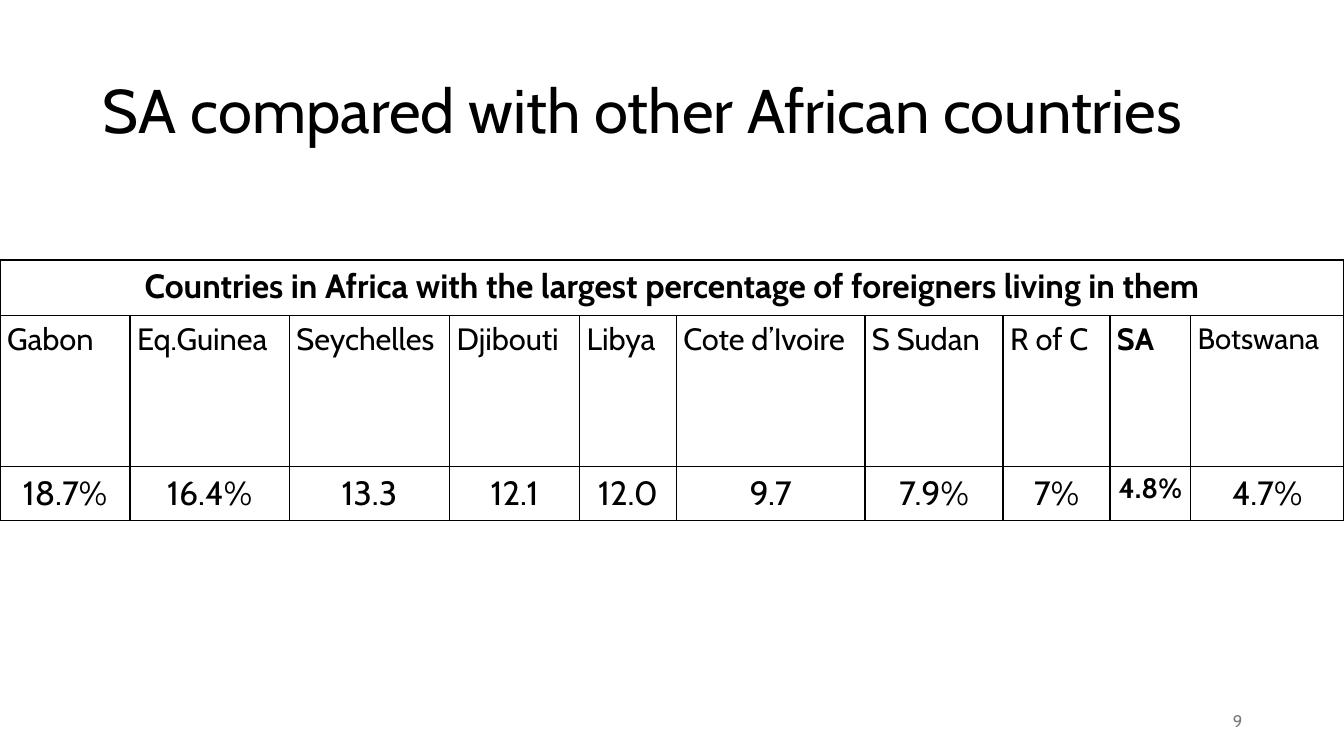
from lxml.etree import SubElement
from pptx import Presentation
from pptx.dml.color import RGBColor
from pptx.enum.text import MSO_ANCHOR, PP_ALIGN
from pptx.oxml.ns import qn
from pptx.util import Pt

PX = 9144  # 100 px to the inch
FONT = "Cabin"
BLACK = RGBColor(0x00, 0x00, 0x00)
GREY = RGBColor(0x79, 0x79, 0x79)

HEADING = "Countries in Africa with the largest percentage of foreigners living in them"
COUNTRIES = [  # name, share, column width
    ("Gabon", "18.7%", 129),
    ("Eq.Guinea", "16.4%", 158),
    ("Seychelles", "13.3", 159),
    ("Djibouti", "12.1", 129),
    ("Libya", "12.0", 96),
    ("Cote d’Ivoire", "9.7", 187),
    ("S Sudan", "7.9%", 137),
    ("R of C", "7%", 106),
    ("SA", "4.8%", 80),
    ("Botswana", "4.7%", 152),
]
ROW_HEIGHTS = [55, 150, 53]
NAME_SIZES = {"Botswana": 21}
SHARE_SIZES = {"SA": 20}


def write(frame, text, size, color=BLACK, bold=False, align=PP_ALIGN.LEFT,
          line_spacing=None, space_after=None):
    para = frame.paragraphs[0]
    para.alignment = align
    para.line_spacing = line_spacing
    if space_after is not None:
        para.space_after = Pt(space_after)
    span = para.add_run()
    span.text = text
    span.font.name = FONT
    span.font.size = Pt(size)
    span.font.bold = bold
    span.font.color.rgb = color


def place(shape, left, top, width, height):
    shape.left, shape.top = left * PX, top * PX
    shape.width, shape.height = width * PX, height * PX


def add_title(page, text):
    title = page.shapes.title
    place(title, 92, 40, 1150, 145)
    title.text_frame.vertical_anchor = MSO_ANCHOR.MIDDLE
    write(title.text_frame, text, 44, line_spacing=0.9)


def add_page_number(page, text):
    box = page.shapes.add_textbox(942 * PX, 695 * PX, 300 * PX, 40 * PX)
    box.text_frame.word_wrap = True
    box.text_frame.vertical_anchor = MSO_ANCHOR.MIDDLE
    write(box.text_frame, text, 12, color=GREY, align=PP_ALIGN.RIGHT)


def outline_cell(cell):
    properties = cell._tc.get_or_add_tcPr()
    for side in ("a:lnL", "a:lnR", "a:lnT", "a:lnB"):
        line = SubElement(properties, qn(side), w=str(Pt(1)))
        fill = SubElement(line, qn("a:solidFill"))
        SubElement(fill, qn("a:srgbClr"), val=str(BLACK))


def write_cell(cell, text, size, **text_format):
    write(cell.text_frame, text, size, line_spacing=1.15, space_after=8, **text_format)


def add_country_table(page):
    widths = [width for _, _, width in COUNTRIES]
    table = page.shapes.add_table(
        len(ROW_HEIGHTS), len(COUNTRIES), 0, 258 * PX,
        sum(widths) * PX, sum(ROW_HEIGHTS) * PX).table
    table.first_row = False
    table.horz_banding = False
    for column, width in zip(table.columns, widths):
        column.width = width * PX
    for row, height in zip(table.rows, ROW_HEIGHTS):
        row.height = height * PX
    for cell in table.iter_cells():
        outline_cell(cell)
        cell.fill.background()
        cell.margin_left = cell.margin_right = 7 * PX
        cell.margin_top = cell.margin_bottom = 0

    heading = table.cell(0, 0)
    heading.merge(table.cell(0, len(COUNTRIES) - 1))
    write_cell(heading, HEADING, 24, bold=True, align=PP_ALIGN.CENTER)
    for index, (name, share, _) in enumerate(COUNTRIES):
        bold = name == "SA"
        write_cell(table.cell(1, index), name, NAME_SIZES.get(name, 22), bold=bold)
        write_cell(table.cell(2, index), share, SHARE_SIZES.get(name, 24),
                   bold=bold, align=PP_ALIGN.CENTER)


def main():
    deck = Presentation()
    deck.slide_width, deck.slide_height = 1333 * PX, 750 * PX
    page = deck.slides.add_slide(deck.slide_layouts.get_by_name("Title Only"))
    add_title(page, "SA compared with other African countries")
    add_country_table(page)
    add_page_number(page, "9")
    deck.save("out.pptx")


if __name__ == "__main__":
    main()
